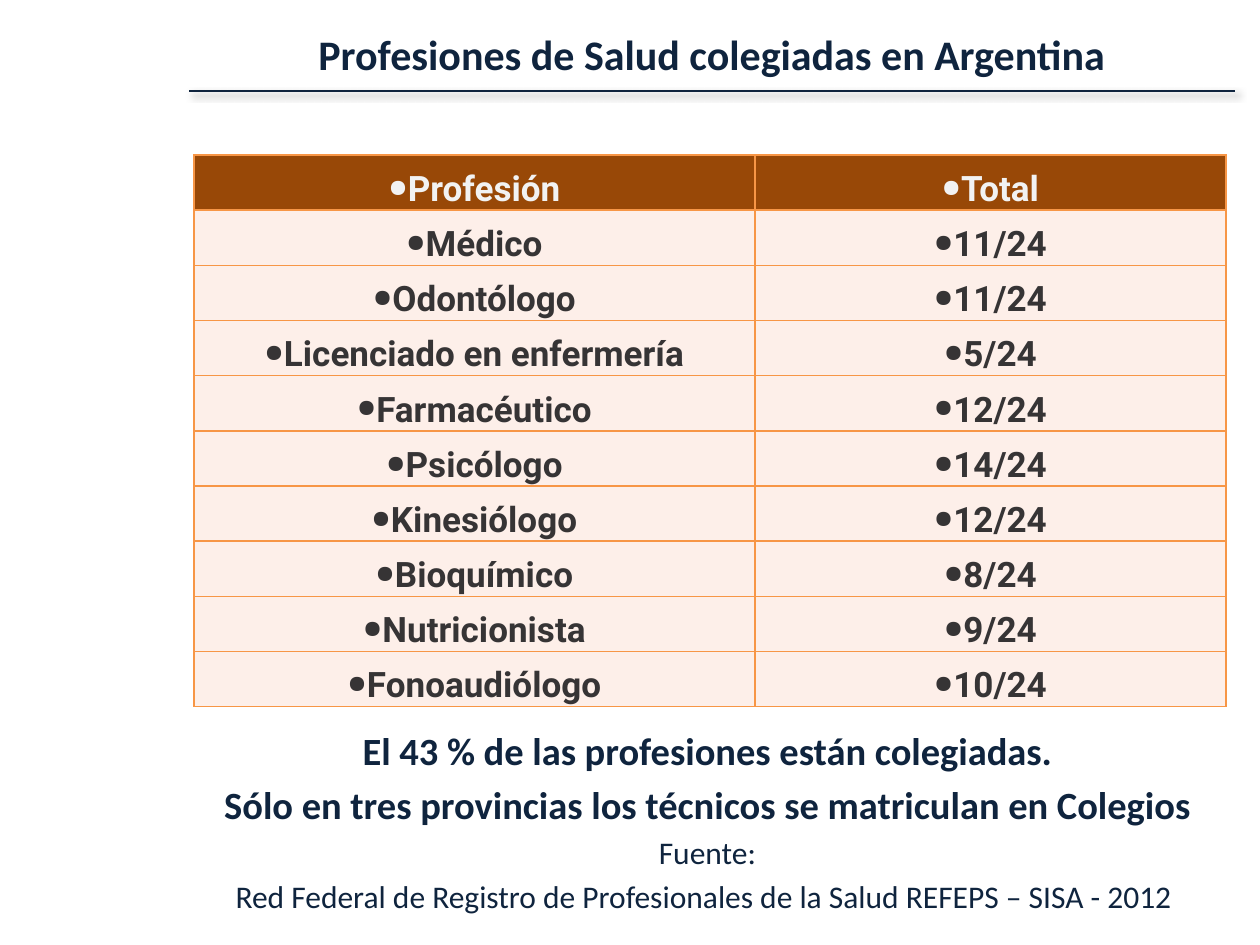
"""Slide on the health professions that have professional colleges in Argentina."""
import lxml.etree
import pptx
import pptx.dml.color
import pptx.enum.shapes
import pptx.enum.text
import pptx.oxml
import pptx.oxml.ns
import pptx.util

NAVY = pptx.dml.color.RGBColor(0x0F, 0x24, 0x3E)
BROWN = pptx.dml.color.RGBColor(0x98, 0x48, 0x07)
ORANGE = pptx.dml.color.RGBColor(0xF7, 0x96, 0x46)
BLUSH = pptx.dml.color.RGBColor(0xFD, 0xEF, 0xE9)
PALE = pptx.dml.color.RGBColor(0xF2, 0xF2, 0xF2)
CHARCOAL = pptx.dml.color.RGBColor(0x36, 0x34, 0x35)

Anchor = pptx.enum.text.MSO_ANCHOR
DRAWING = pptx.oxml.ns.nsdecls("a")

deck = pptx.Presentation()
deck.slide_width = pptx.util.Inches(10)
deck.slide_height = pptx.util.Inches(7.5)
slide = deck.slides.add_slide(deck.slide_layouts[6])


def grid(*counts):
    """Turn counts of grid units, 100 across and 75 down, into lengths."""
    return [round(count * deck.slide_width / 100) for count in counts]


def write(paragraph, wording, color, formats):
    """Put one centred run with the given font formats into a paragraph."""
    paragraph.alignment = pptx.enum.text.PP_ALIGN.CENTER
    run = paragraph.add_run()
    run.text = wording
    run.font.color.rgb = color
    for attribute, value in formats.items():
        setattr(run.font, attribute, value)


professions = [
    ("Profesión", "Total"),
    ("Médico", "11/24"),
    ("Odontólogo", "11/24"),
    ("Licenciado en enfermería", "5/24"),
    ("Farmacéutico", "12/24"),
    ("Psicólogo", "14/24"),
    ("Kinesiólogo", "12/24"),
    ("Bioquímico", "8/24"),
    ("Nutricionista", "9/24"),
    ("Fonoaudiólogo", "10/24"),
]
entry_format = {"name": "Roboto", "size": pptx.util.Pt(20), "bold": True}
hairline = pptx.util.Inches(0.01)
cell_format = {
    "vertical_anchor": Anchor.BOTTOM,
    "margin_left": hairline,
    "margin_top": hairline,
    "margin_right": hairline,
    "margin_bottom": 0,
}
bullet_xml = [
    f'<a:buSzPct {DRAWING} val="70000"/>',
    f'<a:buChar {DRAWING} char="●"/>',
]

colleges = slide.shapes.add_table(
    len(professions), 2, *grid(15.4, 12.3, 81.9, 43.8)
).table
for column, width in zip(colleges.columns, grid(44.5, 37.4)):
    column.width = width
for row, entries in enumerate(professions):
    colleges.rows[row].height = grid(4.38)[0]
    for column, entry in enumerate(entries):
        cell = colleges.cell(row, column)
        for attribute, value in cell_format.items():
            setattr(cell, attribute, value)
        borders = cell._tc.get_or_add_tcPr()
        for side in "LRTB":
            borders.append(pptx.oxml.parse_xml(
                f'<a:ln{side} {DRAWING} w="12700"><a:solidFill>'
                f'<a:srgbClr val="{ORANGE}"/></a:solidFill></a:ln{side}>'
            ))
        cell.fill.solid()
        cell.fill.fore_color.rgb = BLUSH if row else BROWN
        paragraph = cell.text_frame.paragraphs[0]
        bullet = paragraph._p.get_or_add_pPr()
        bullet.set("marL", "0")
        bullet.set("indent", "0")
        for part in bullet_xml:
            bullet.append(pptx.oxml.parse_xml(part))
        write(paragraph, entry, CHARCOAL if row else PALE, entry_format)

statements = [
    ("El 43 % de las profesiones están colegiadas.", 22, True),
    ("Sólo en tres provincias los técnicos se matriculan en Colegios", 22, True),
    ("Fuente:", 18, False),
    ("Red Federal de Registro de Profesionales de la Salud REFEPS – SISA - 2012 ",
     18, False),
]
heading = [("Profesiones de Salud colegiadas en Argentina", 24, True)]
passages = [
    (statements, (14.6, 57.2, 83.1, 16.4), Anchor.TOP),
    (heading, (13, 0.5, 87, 7.5), Anchor.MIDDLE),
]
for lines, place, anchor in passages:
    passage = slide.shapes.add_textbox(*grid(*place)).text_frame
    passage.word_wrap = True
    passage.vertical_anchor = anchor
    for index, (wording, size, bold) in enumerate(lines):
        paragraph = passage.add_paragraph() if index else passage.paragraphs[0]
        if index:
            paragraph.space_before = pptx.util.Pt(0.2 * size)
        write(paragraph, wording, NAVY,
              {"name": "Calibri", "size": pptx.util.Pt(size), "bold": bold})

heading_rule = slide.shapes.add_connector(
    pptx.enum.shapes.MSO_CONNECTOR.STRAIGHT, *grid(15, 7.2, 98, 7.2)
)
heading_rule.line.color.rgb = NAVY
heading_rule.line.width = pptx.util.Pt(1)
effects = lxml.etree.SubElement(
    heading_rule._element.spPr, pptx.oxml.ns.qn("a:effectLst")
)
effects.append(pptx.oxml.parse_xml(
    f'<a:outerShdw {DRAWING} blurRad="50800" dist="38100" dir="2700000">'
    '<a:srgbClr val="000000"><a:alpha val="40000"/></a:srgbClr></a:outerShdw>'
))

deck.save("out.pptx")
